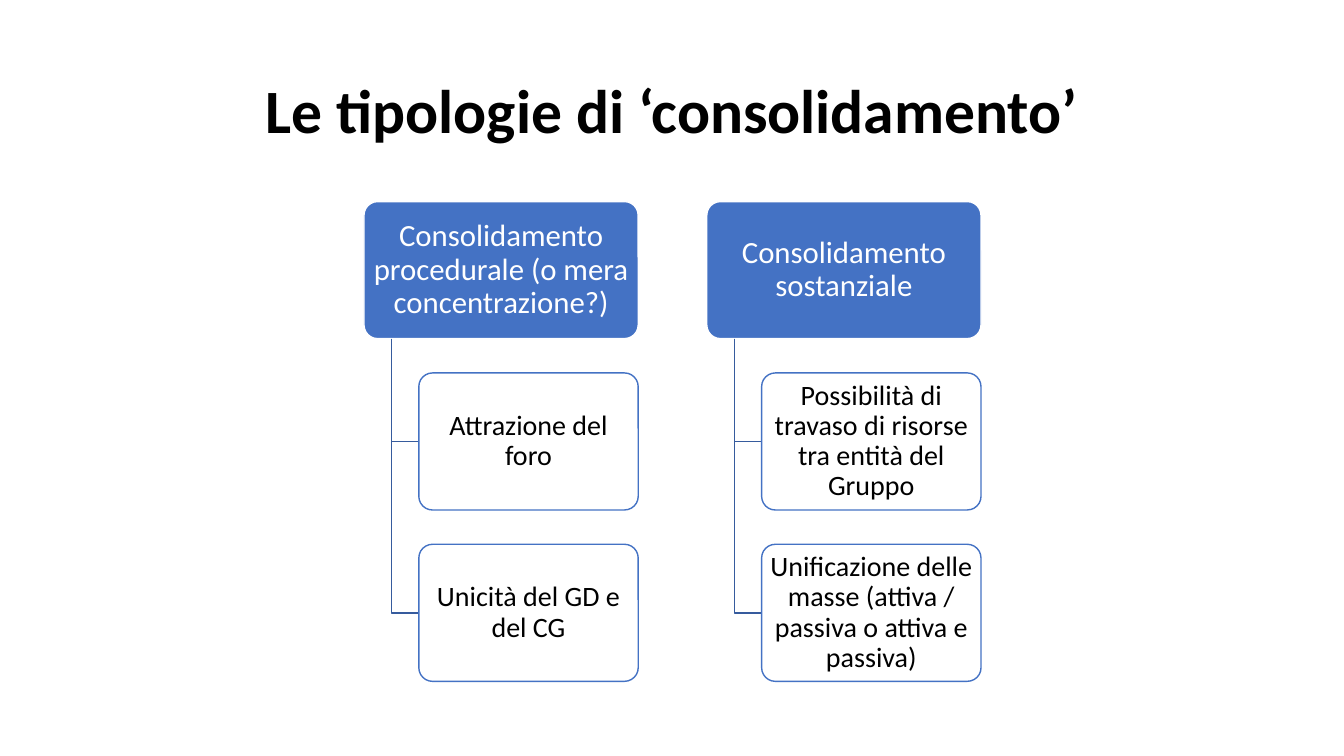
from pptx import Presentation
from pptx.dml.color import RGBColor
from pptx.enum.shapes import MSO_SHAPE
from pptx.enum.text import MSO_ANCHOR, PP_ALIGN
from pptx.util import Inches, Pt

ROUNDED = MSO_SHAPE.ROUNDED_RECTANGLE
MIDDLE = MSO_ANCHOR.MIDDLE
CENTER = PP_ALIGN.CENTER

BLUE = RGBColor(0x44, 0x72, 0xC4)
DARK_BLUE = RGBColor(0x36, 0x5B, 0x9D)
WHITE = RGBColor(0xFF, 0xFF, 0xFF)
BLACK = RGBColor(0x00, 0x00, 0x00)
FONT = "Calibri"

# Grid, in inches
GRID_LEFT, GRID_TOP = 3.61, 2.0
COLUMN_STEP, ROW_STEP = 3.4, 1.7
HEAD_WIDTH, BOX_HEIGHT = 2.72, 1.36
INDENT = HEAD_WIDTH / 5
CHILD_WIDTH = HEAD_WIDTH * 0.8
BOX_MARGIN = 0.03

TITLE = "Le tipologie di ‘consolidamento’"
BRANCHES = [
    ("Consolidamento procedurale (o mera concentrazione?)",
     ["Attrazione del foro", "Unicità del GD e del CG"]),
    ("Consolidamento sostanziale",
     ["Possibilità di travaso di risorse tra entità del Gruppo",
      "Unificazione delle masse (attiva / passiva o attiva e passiva)"]),
]


def set_text(shape, text, size, color, bold=False):
    frame = shape.text_frame
    frame.word_wrap = True
    frame.vertical_anchor = MIDDLE
    paragraph = frame.paragraphs[0]
    paragraph.text = text
    paragraph.alignment = CENTER
    paragraph.line_spacing = 0.9
    font = paragraph.font
    font.name, font.size, font.bold = FONT, Pt(size), bold
    font.color.rgb = color


def add_title(slide):
    box = slide.shapes.add_textbox(
        Inches(0.92), Inches(0.4), Inches(11.5), Inches(1.45))
    set_text(box, TITLE, 44, BLACK, bold=True)


def add_box(slide, left, top, width, text, size, fill, line, text_color):
    box = slide.shapes.add_shape(
        ROUNDED, Inches(left), Inches(top), Inches(width), Inches(BOX_HEIGHT))
    box.adjustments[0] = 0.1
    box.shadow.inherit = False
    box.fill.solid()
    box.fill.fore_color.rgb = fill
    box.line.color.rgb = line
    box.line.width = Pt(1)
    frame = box.text_frame
    frame.margin_left = frame.margin_right = Inches(BOX_MARGIN)
    frame.margin_top = frame.margin_bottom = Inches(BOX_MARGIN)
    set_text(box, text, size, text_color)


def add_elbow(slide, left, top, right, bottom):
    """Draw a line down from (left, top), then across to (right, bottom)."""
    builder = slide.shapes.build_freeform(Inches(left), Inches(top))
    builder.add_line_segments(
        [(Inches(left), Inches(bottom)), (Inches(right), Inches(bottom))],
        close=False)
    elbow = builder.convert_to_shape()
    elbow.shadow.inherit = False
    elbow.fill.background()
    elbow.line.color.rgb = DARK_BLUE
    elbow.line.width = Pt(1)


def add_branch(slide, column, heading, children):
    left = GRID_LEFT + column * COLUMN_STEP
    child_left = left + INDENT
    add_box(slide, left, GRID_TOP, HEAD_WIDTH, heading, 22, BLUE, WHITE, WHITE)
    for row, child in enumerate(children, start=1):
        top = GRID_TOP + row * ROW_STEP
        add_elbow(slide, left + INDENT / 2, GRID_TOP + BOX_HEIGHT,
                  child_left, top + BOX_HEIGHT / 2)
        add_box(slide, child_left, top, CHILD_WIDTH, child, 20, WHITE, BLUE, BLACK)


def main():
    presentation = Presentation()
    presentation.slide_width = Inches(13.33)
    presentation.slide_height = Inches(7.5)
    slide = presentation.slides.add_slide(presentation.slide_layouts[6])
    add_title(slide)
    for column, (heading, children) in enumerate(BRANCHES):
        add_branch(slide, column, heading, children)
    presentation.save("out.pptx")


if __name__ == "__main__":
    main()
